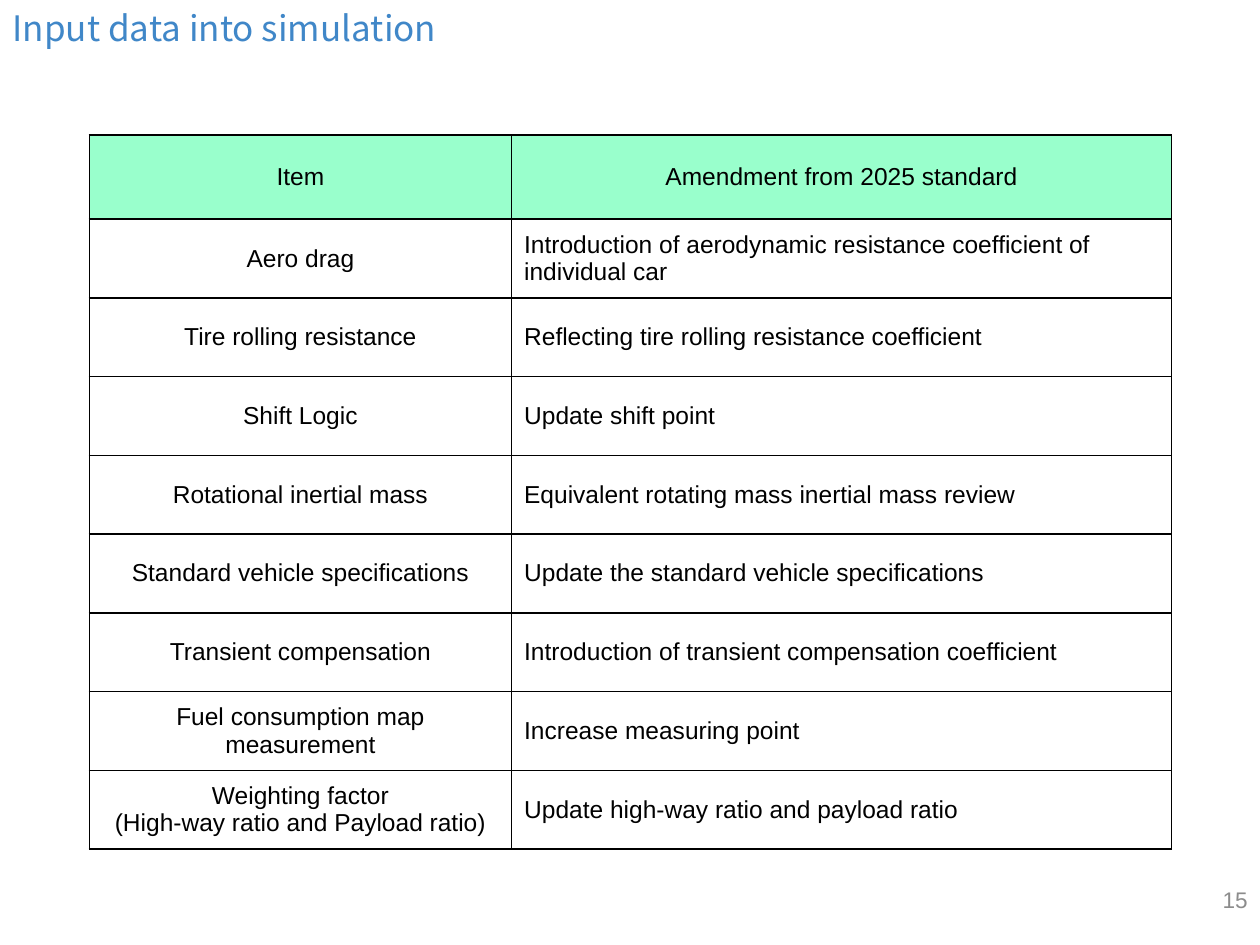
from lxml import etree
from pptx import Presentation
from pptx.dml.color import RGBColor
from pptx.enum import text
from pptx.oxml import ns
from pptx.util import Inches, Pt


def color(value):
    return RGBColor.from_string(value)


def format_text(frame, font_name, size, font_color, alignment):
    for paragraph in frame.paragraphs:
        paragraph.alignment = alignment
        paragraph.font.name = font_name
        paragraph.font.size = Pt(size)
        paragraph.font.bold = False
        paragraph.font.color.rgb = color(font_color)


LEFT, CENTER, RIGHT = text.PP_ALIGN.LEFT, text.PP_ALIGN.CENTER, text.PP_ALIGN.RIGHT

presentation = Presentation()
presentation.slide_width = Inches(10)
presentation.slide_height = Inches(7.5)
slide = presentation.slides.add_slide(presentation.slide_layouts[5])

# Title
title = slide.shapes.title
title.left, title.top = Inches(0), Inches(0)
title.width, title.height = Inches(8.92), Inches(0.44)
title.text_frame.text = "Input data into simulation"
title.text_frame.vertical_anchor = text.MSO_ANCHOR.MIDDLE
title.text_frame.auto_size = text.MSO_AUTO_SIZE.NONE
format_text(title.text_frame, "Noto Sans CJK JP", 20, "4087C8", LEFT)

# Page number
page_number = slide.shapes.add_textbox(Inches(9.25), Inches(6.98), Inches(0.75), Inches(0.52))
page_number.text_frame.word_wrap = True
page_number.text_frame.text = "15"
format_text(page_number.text_frame, "Arial", 12.9, "8C8C8C", RIGHT)

# Amendment table
rows = [
    ("Item", "Amendment from 2025 standard"),
    ("Aero drag", "Introduction of aerodynamic resistance coefficient of individual car"),
    ("Tire rolling resistance", "Reflecting tire rolling resistance coefficient"),
    ("Shift Logic", "Update shift point"),
    ("Rotational inertial mass", "Equivalent rotating mass inertial mass review"),
    ("Standard vehicle specifications", "Update the standard vehicle specifications"),
    ("Transient compensation", "Introduction of transient compensation coefficient"),
    ("Fuel consumption map measurement", "Increase measuring point"),
    ("Weighting factor\n(High-way ratio and Payload ratio)",
     "Update high-way ratio and payload ratio"),
]
table = slide.shapes.add_table(
    len(rows), 2, Inches(0.71), Inches(1.07), Inches(8.59), Inches(5.67)).table
table.first_row = False
table.horz_banding = False
table.columns[0].width = Inches(3.35)
table.columns[1].width = Inches(5.24)

for row_index, row in enumerate(rows):
    is_header = row_index == 0
    table.rows[row_index].height = Inches(0.67 if is_header else 0.625)
    for column_index, wording in enumerate(row):
        cell = table.cell(row_index, column_index)
        cell.text = wording
        cell.vertical_anchor = text.MSO_ANCHOR.MIDDLE
        centered = is_header or column_index == 0
        format_text(cell.text_frame, "Arial", 14, "000000", CENTER if centered else LEFT)

        # Black one-point borders, placed before the fill
        properties = cell._tc.get_or_add_tcPr()
        for side in ("a:lnL", "a:lnR", "a:lnT", "a:lnB"):
            line = etree.SubElement(properties, ns.qn(side), w=str(Pt(1)))
            line_fill = etree.SubElement(line, ns.qn("a:solidFill"))
            etree.SubElement(line_fill, ns.qn("a:srgbClr"), val="000000")
        cell.fill.solid()
        cell.fill.fore_color.rgb = color("99FFCC" if is_header else "FFFFFF")

presentation.save("out.pptx")
